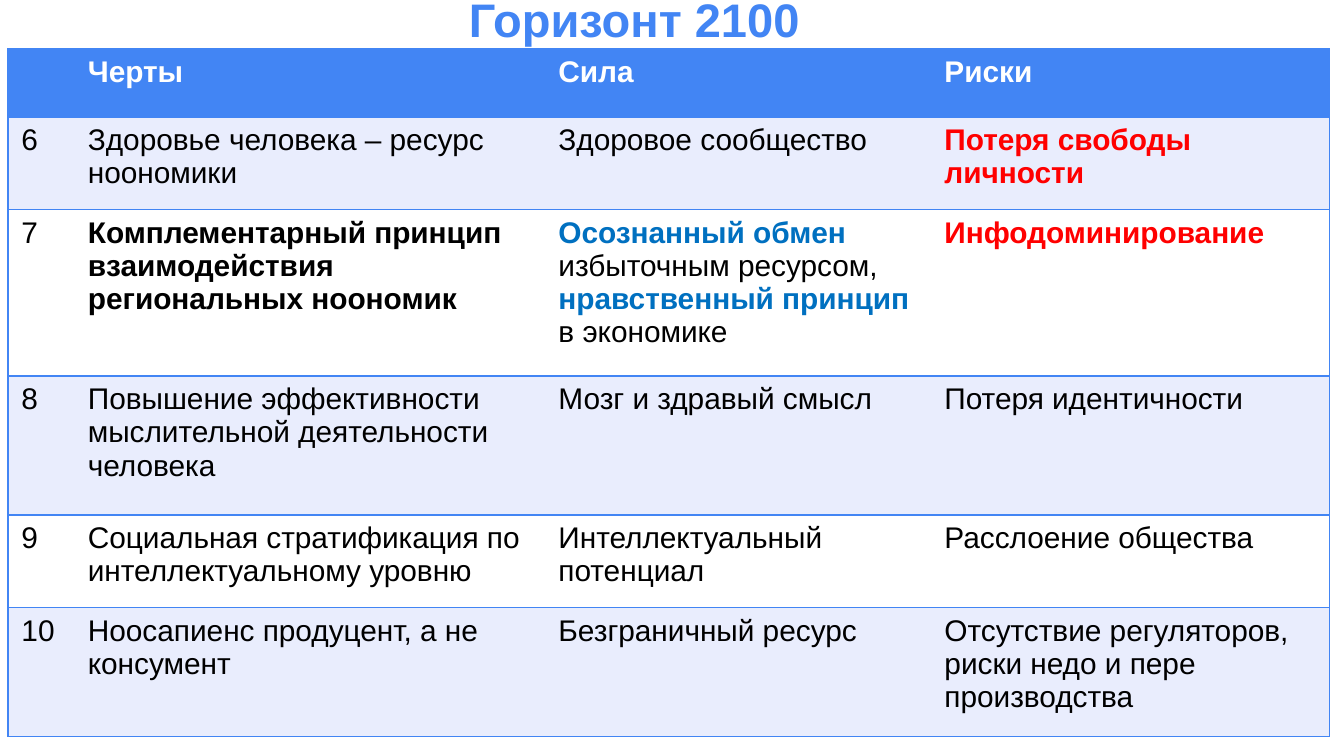
from lxml import etree
from pptx import Presentation
from pptx import util as u
from pptx.dml.color import RGBColor
from pptx.enum import text
from pptx.oxml import ns

Pt = u.Pt
BLUE = RGBColor(0x42, 0x85, 0xF4)
PALE = RGBColor(0xE9, 0xED, 0xFD)
WHITE = RGBColor(0xFF, 0xFF, 0xFF)
BLACK = RGBColor(0, 0, 0)
RED = RGBColor(0xFF, 0, 0)
DEEP = RGBColor(0, 0x70, 0xC0)
PLAIN = "{2D5ABB26-0587-4C30-8999-92F81FD0307C}"

COLS = [35.6, 252.1, 206.8, 213.4]
ROWS = [36.5, 49.6, 89.3, 74.3, 49.7, 69.1]
HEAD = ["", "Черты", "Сила", "Риски"]
BODY = [
    ["6", "Здоровье человека – ресурс ноономики", "Здоровое сообщество",
     [("Потеря свободы личности", RED, True)]],
    ["7",
     [("Комплементарный принцип взаимодействия региональных ноономик", BLACK, True)],
     [("Осознанный обмен ", DEEP, True), ("избыточным ресурсом, ", BLACK, False),
      ("нравственный принцип", DEEP, True), (" в экономике", BLACK, False)],
     [("Инфодоминирование", RED, True)]],
    ["8", "Повышение эффективности мыслительной деятельности человека",
     "Мозг и здравый смысл", "Потеря идентичности"],
    ["9", "Социальная стратификация по интеллектуальному уровню",
     "Интеллектуальный потенциал", "Расслоение общества"],
    ["10", "Ноосапиенс продуцент, а не консумент", "Безграничный ресурс",
     "Отсутствие регуляторов, риски недо и пере производства"],
]


class Deck:
    """Holds the style and the current slide, and draws its elements."""

    def __init__(self, slide, face="Arial", size=16):
        self.slide, self.face, self.size = slide, face, size

    def style(self, run, color, bold, size=None):
        font = run.font
        font.name, font.size, font.bold = self.face, Pt(size or self.size), bold
        font.color.rgb = color

    def title(self, words, left, top, width, height, size):
        frame = self.slide.shapes.add_textbox(
            Pt(left), Pt(top), Pt(width), Pt(height)).text_frame
        frame.word_wrap = True
        frame.margin_top = Pt(5)
        frame.text = words
        par = frame.paragraphs[0]
        par.alignment = text.PP_ALIGN.CENTER
        self.style(par.runs[0], BLUE, True, size)

    def border(self, cell, sides):
        props = cell._tc.get_or_add_tcPr()
        for spot, side in enumerate(sides):
            line = etree.Element(ns.qn("a:ln" + side), w=str(Pt(1)))
            fill = etree.SubElement(line, ns.qn("a:solidFill"))
            etree.SubElement(fill, ns.qn("a:srgbClr"), val=str(BLUE))
            props.insert(spot, line)

    def cell(self, cell, parts, fill, sides):
        cell.fill.solid()
        cell.fill.fore_color.rgb = fill
        self.border(cell, sides)
        par = cell.text_frame.paragraphs[0]
        for words, color, bold in parts:
            run = par.add_run()
            run.text = words
            self.style(run, color, bold)

    def table(self, rows, left, top, cols, highs):
        frame = self.slide.shapes.add_table(
            len(rows), len(cols), Pt(left), Pt(top), Pt(sum(cols)), Pt(sum(highs)))
        grid = frame.table
        grid._tbl.tblPr.find(ns.qn("a:tableStyleId")).text = PLAIN
        for col, width in zip(grid.columns, cols):
            col.width = Pt(width)
        for r, (row, high) in enumerate(zip(rows, highs)):
            grid.rows[r].height = Pt(high)
            fill = BLUE if r == 0 else PALE if r % 2 else WHITE
            ink = BLACK if r else WHITE
            for c, item in enumerate(row):
                parts = [(item, ink, r == 0)] if isinstance(item, str) else item
                sides = ["L"] * (c == 0) + ["R"] * (c == len(cols) - 1) + ["T", "B"]
                self.cell(grid.cell(r, c), parts if item else [], fill, sides)


def main():
    show = Presentation()
    show.slide_width, show.slide_height = Pt(720), Pt(405)
    deck = Deck(show.slides.add_slide(show.slide_layouts[6]))
    deck.table([HEAD] + BODY, 4.3, 26.2, COLS, ROWS)
    deck.title("Горизонт 2100", 4.3, -10, 671, 20, 25.2)
    show.save("out.pptx")


if __name__ == "__main__":
    main()
